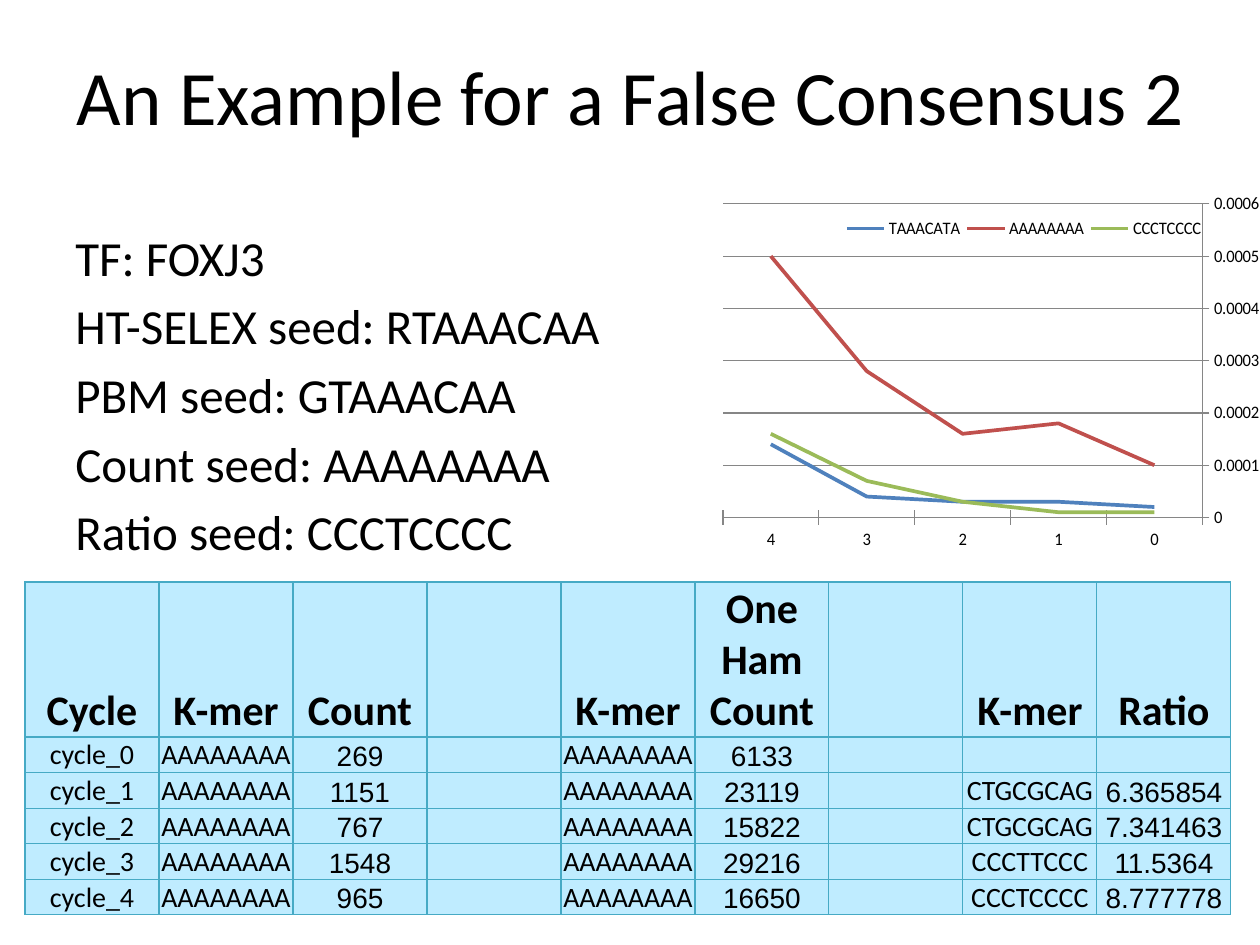
from lxml import etree
from pptx import Presentation
from pptx import util as u
from pptx.chart.data import CategoryChartData
from pptx.dml.color import RGBColor
from pptx.enum import chart as ch
from pptx.enum import text as t
from pptx.oxml.ns import qn

SCALE = 914400 / 126
COLORS = {
    "ink": "000000", "grid": "868686", "cell": "BFECFF", "border": "46AAC5",
    "TAAACATA": "4F81BD", "AAAAAAAA": "C0504D", "CCCTCCCC": "9BBB59",
}
FONT = "Calibri"

FACTS = [
    "TF: FOXJ3",
    "HT-SELEX seed: RTAAACAA",
    "PBM seed: GTAAACAA",
    "Count seed: AAAAAAAA",
    "Ratio seed: CCCTCCCC",
]
CYCLES = ["0", "1", "2", "3", "4"]
FREQUENCIES = {
    "TAAACATA": [0.00002, 0.00003, 0.00003, 0.00004, 0.00014],
    "AAAAAAAA": [0.0001, 0.00018, 0.00016, 0.00028, 0.0005],
    "CCCTCCCC": [0.00001, 0.00001, 0.00003, 0.00007, 0.00016],
}
HEADER = ["Cycle", "K-mer", "Count", "", "K-mer", "One Ham Count", "", "K-mer", "Ratio"]
POLY_A = "AAAAAAAA"
COUNTS = [
    ("269", "6133", "", ""),
    ("1151", "23119", "CTGCGCAG", "6.365854"),
    ("767", "15822", "CTGCGCAG", "7.341463"),
    ("1548", "29216", "CCCTTCCC", "11.5364"),
    ("965", "16650", "CCCTCCCC", "8.777778"),
]


def px(length):
    return u.Emu(round(length * SCALE))


def color(name):
    return RGBColor.from_string(COLORS[name])


def apply(target, values):
    for name, value in values.items():
        setattr(target, name, value)


def style_font(font, size, bold=False):
    apply(font, {"name": FONT, "size": u.Pt(size), "bold": bold})
    font.color.rgb = color("ink")


def style_line(line, name, width):
    line.color.rgb = color(name)
    line.width = u.Pt(width)


def add_text(page, box, lines, size, para_format, anchor):
    frame = page.shapes.add_textbox(*map(px, box)).text_frame
    apply(frame, {"word_wrap": True, "vertical_anchor": anchor})
    for index, line in enumerate(lines):
        para = frame.add_paragraph() if index else frame.paragraphs[0]
        apply(para, para_format)
        span = para.add_run()
        span.text = line
        style_font(span.font, size)
    return frame


def add_title(page, box):
    add_text(page, box, ["An Example for a False Consensus 2"], 44,
             {"alignment": t.PP_ALIGN.CENTER}, t.MSO_ANCHOR.MIDDLE)


def add_facts(page, box):
    frame = add_text(page, box, FACTS, 28, {"space_before": u.Pt(5.6)}, t.MSO_ANCHOR.TOP)
    hanging = px(47)
    for para in frame.paragraphs:
        props = para._p.get_or_add_pPr()
        props.set("marL", str(hanging))
        props.set("indent", str(-hanging))


def set_layout(parent, index, fractions, inner=False):
    """Place a chart part by its x, y, w, h as fractions of the chart."""
    for old in parent.findall(qn("c:layout")):
        parent.remove(old)
    layout = etree.Element(qn("c:layout"))
    manual = etree.SubElement(layout, qn("c:manualLayout"))
    values = {"layoutTarget": "inner"} if inner else {}
    values.update(xMode="edge", yMode="edge")
    values.update(zip("xywh", map(str, fractions)))
    for tag, value in values.items():
        etree.SubElement(manual, qn(f"c:{tag}"), val=value)
    parent.insert(index, layout)


def add_frequency_chart(page, box):
    data = CategoryChartData()
    data.categories = CYCLES
    for name, values in FREQUENCIES.items():
        data.add_series(name, values)
    chart = page.shapes.add_chart(ch.XL_CHART_TYPE.LINE, *map(px, box), data).chart
    apply(chart, {"has_title": False, "has_legend": True})
    style_font(chart.font, 10)
    chart.plots[0].vary_by_categories = False
    for series in chart.plots[0].series:
        series.smooth = False
        series.marker.style = ch.XL_MARKER_STYLE.NONE
        style_line(series.format.line, series.name, 2.25)

    categories, values = chart.category_axis, chart.value_axis
    for axis in (categories, values):
        axis.major_tick_mark = ch.XL_TICK_MARK.CROSS
        style_line(axis.format.line, "grid", 0.75)
    apply(categories, {"reverse_order": True, "crosses": ch.XL_AXIS_CROSSES.MAXIMUM})
    apply(values, {"minimum_scale": 0, "maximum_scale": 0.0006, "major_unit": 0.0001,
                   "has_major_gridlines": True})
    style_line(values.major_gridlines.format.line, "grid", 0.75)
    apply(values.tick_labels, {"number_format": "General", "number_format_is_linked": False})

    legend = chart.legend
    apply(legend, {"position": ch.XL_LEGEND_POSITION.LEFT, "include_in_layout": False})
    set_layout(legend._element, 1, (0.34, 0.08, 0.63, 0.07))
    plot_area = chart._chartSpace.chart.plotArea
    set_layout(plot_area, 0, (0.14, 0.05, 0.82, 0.83), inner=True)


def add_borders(cell):
    props = cell._tc.get_or_add_tcPr()
    for index, side in enumerate(("lnL", "lnR", "lnT", "lnB")):
        line = etree.Element(qn(f"a:{side}"), w=str(u.Pt(0.75)))
        fill = etree.SubElement(line, qn("a:solidFill"))
        etree.SubElement(fill, qn("a:srgbClr"), val=COLORS["border"])
        props.insert(index, line)


def fill_cell(cell, content, is_header):
    apply(cell, {"margin_left": px(1), "margin_right": px(1), "margin_top": px(1),
                 "margin_bottom": 0, "vertical_anchor": t.MSO_ANCHOR.BOTTOM})
    cell.fill.solid()
    cell.fill.fore_color.rgb = color("cell")
    add_borders(cell)
    para = cell.text_frame.paragraphs[0]
    para.alignment = t.PP_ALIGN.CENTER
    if not content:
        etree.SubElement(para._p, qn("a:endParaRPr"), sz="1600")
        return
    span = para.add_run()
    span.text = content
    style_font(span.font, 24 if is_header else 16, is_header)
    if not is_header:
        para._p.get_or_add_pPr().set("rtl", "1")
        etree.SubElement(span._r.get_or_add_rPr(), qn("a:cs"), typeface="Arial")


def add_cycle_table(page, box):
    rows = [HEADER] + [
        [f"cycle_{cycle}", POLY_A, count, "", POLY_A, near_count, "", kmer, ratio]
        for cycle, (count, near_count, kmer, ratio) in zip(CYCLES, COUNTS)
    ]
    table = page.shapes.add_table(len(rows), len(HEADER), *map(px, box)).table
    apply(table, {"first_row": False, "horz_banding": False})
    for column in table.columns:
        column.width = px(box[2] / len(HEADER))
    header_height = 155
    for index, (row, contents) in enumerate(zip(table.rows, rows)):
        row.height = px((box[3] - header_height) / len(COUNTS) if index else header_height)
        for cell, content in zip(row.cells, contents):
            fill_cell(cell, content, index == 0)


def main():
    deck = Presentation()
    apply(deck, {"slide_width": px(1260), "slide_height": px(945)})
    page = deck.slides.add_slide(deck.slide_layouts[6])
    add_title(page, (64, 16, 1134, 158))
    add_facts(page, (63, 221, 1134, 624))
    add_cycle_table(page, (25, 582, 1206, 333))
    add_frequency_chart(page, (641, 185, 619, 378))
    deck.save("out.pptx")


if __name__ == "__main__":
    main()
